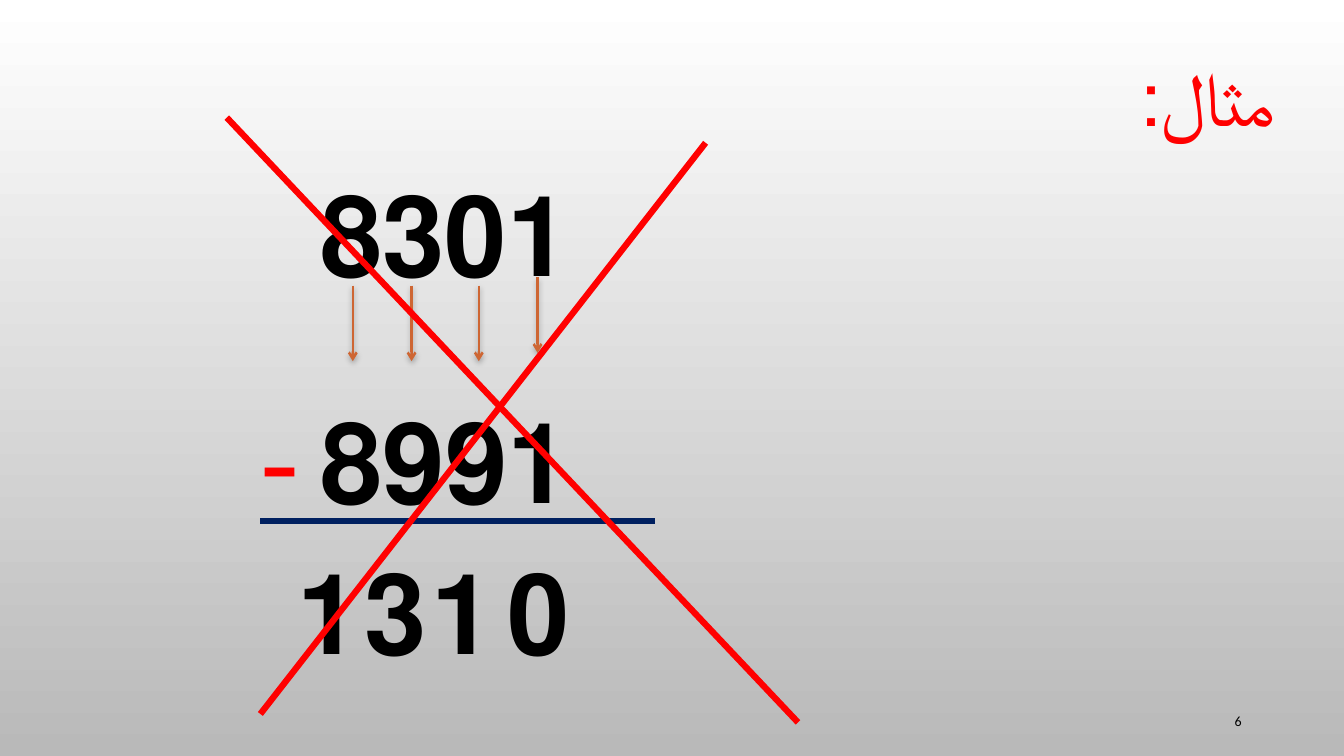
from lxml import etree
from pptx import Presentation
from pptx.dml.color import RGBColor
from pptx.enum.shapes import MSO_CONNECTOR
from pptx.enum.text import MSO_ANCHOR, PP_ALIGN
from pptx.oxml.ns import qn
from pptx.util import Pt

STRAIGHT = MSO_CONNECTOR.STRAIGHT
TOP, MIDDLE = MSO_ANCHOR.TOP, MSO_ANCHOR.MIDDLE
RIGHT = PP_ALIGN.RIGHT
WHITE = RGBColor(0xFF, 0xFF, 0xFF)
GREY = RGBColor(0xB9, 0xB9, 0xB9)
BLACK = RGBColor(0, 0, 0)
RED = RGBColor(0xFF, 0, 0)
NAVY = RGBColor(0, 0x20, 0x60)
ORANGE = RGBColor(0xCE, 0x66, 0x33)


class Board:
    font = "Cambria"
    thick = 4.5
    thin = 1.75

    def __init__(self, slide):
        self.slide = slide

    def backdrop(self, top, bottom):
        fill = self.slide.background.fill
        fill.gradient()
        fill.gradient_angle = 270
        for stop, color in zip(fill.gradient_stops, (top, bottom)):
            stop.color.rgb = color

    def text(self, words, left, top, width, height, size=80, color=BLACK,
             bold=True, anchor=TOP):
        box = self.slide.shapes.add_textbox(Pt(left), Pt(top), Pt(width), Pt(height))
        frame = box.text_frame
        frame.word_wrap = True
        frame.vertical_anchor = anchor
        frame.text = words
        para = frame.paragraphs[0]
        para.alignment = RIGHT
        para._p.get_or_add_pPr().set("rtl", "1")
        run = para.runs[0]
        run.font.name = self.font
        run.font.size = Pt(size)
        run.font.bold = bold
        run.font.color.rgb = color
        return run

    def number(self, words, left, top, width, height):
        run = self.text(words, left, top, width, height, 10, bold=False, anchor=MIDDLE)
        run.font.name = "Calibri"
        etree.SubElement(run.font._element, qn("a:cs"), typeface="Calibri")

    def line(self, start, end, color, weight=thick, shapes=None):
        shapes = shapes or self.slide.shapes
        link = shapes.add_connector(STRAIGHT, *map(Pt, start + end))
        link.line.color.rgb = color
        link.line.width = Pt(weight)
        etree.SubElement(link._element.spPr, qn("a:effectLst"))
        return link

    def arrow(self, x, y, length):
        link = self.line((x, y), (x, y + length), ORANGE, self.thin)
        etree.SubElement(link.line._get_or_add_ln(), qn("a:tailEnd"), type="arrow")
        effects = link._element.spPr.find(qn("a:effectLst"))
        shade = etree.SubElement(effects, qn("a:outerShdw"), blurRad=str(Pt(4)),
                                 dist=str(Pt(2)), dir="5400000", rotWithShape="0")
        tint = etree.SubElement(shade, qn("a:srgbClr"), val="000000")
        etree.SubElement(tint, qn("a:alpha"), val="28000")

    def cross(self, *strokes):
        group = self.slide.shapes.add_group_shape()
        for start, end in strokes:
            self.line(start, end, RED, shapes=group.shapes)


def main():
    deck = Presentation()
    deck.slide_width, deck.slide_height = Pt(960), Pt(540)
    board = Board(deck.slides.add_slide(deck.slide_layouts[6]))
    board.backdrop(WHITE, GREY)

    board.text("مثال:", 738, 33, 180, 102, 54, RED, False)
    board.text("8301", 120, 114, 294, 102)
    board.text("8991", 210, 276, 204, 102)
    board.text("-", 156, 270, 66, 96, 88, RED, False)
    board.line((186, 372), (468, 372), NAVY)

    for x, y in ((384, 198), (342, 204), (294, 204), (252, 204)):
        board.arrow(x, y, 54)
    for digit, left in zip("0131", (342, 288, 240, 192)):
        board.text(digit, left, 384, 72, 102)

    board.cross(((504, 102), (186, 510)), ((162, 84), (570, 516)))
    board.number("6", 678, 500.4, 216, 28.8)
    deck.save("out.pptx")


if __name__ == "__main__":
    main()
